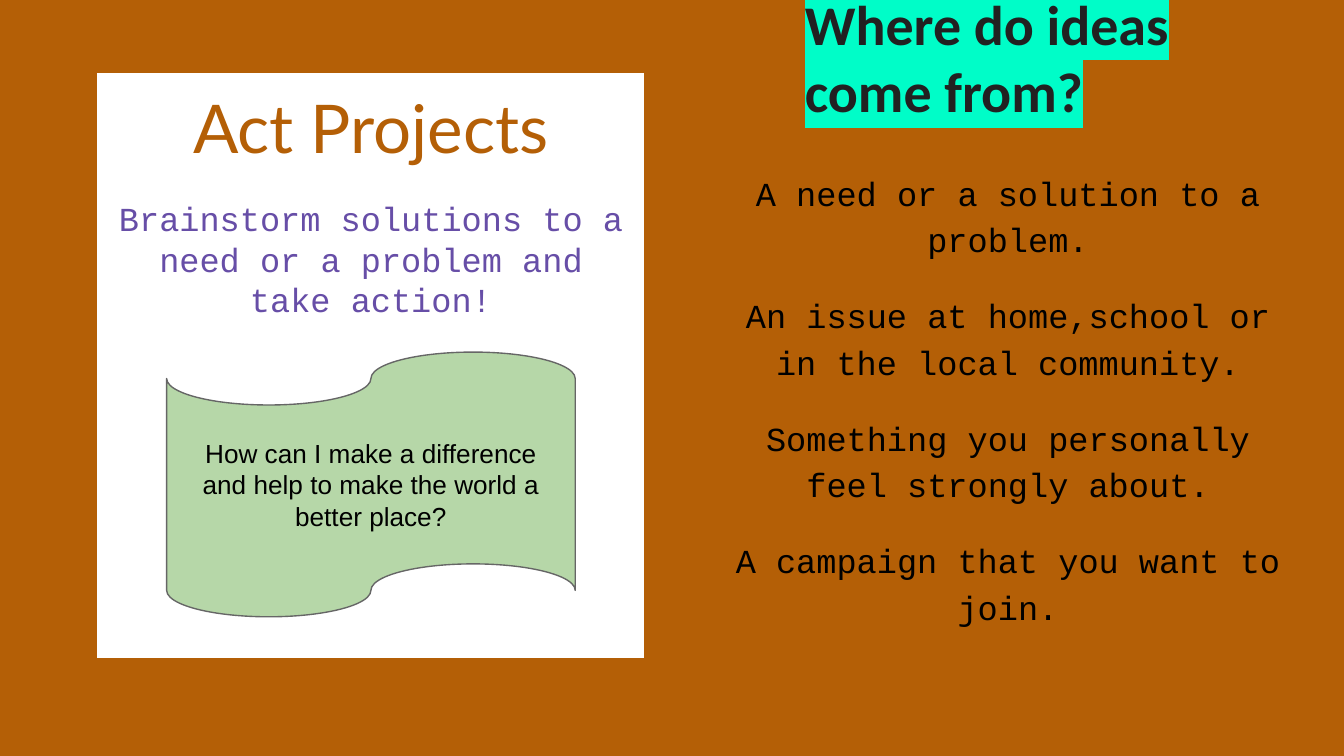
from lxml import etree
from pptx import Presentation
from pptx.dml.color import RGBColor
from pptx.enum.shapes import MSO_SHAPE
from pptx.enum.text import MSO_ANCHOR, PP_ALIGN
from pptx.oxml.ns import qn
from pptx.util import Inches, Pt

RECTANGLE = MSO_SHAPE.RECTANGLE
PUNCHED_TAPE = MSO_SHAPE.FLOWCHART_PUNCHED_TAPE
TOP, MIDDLE, BOTTOM = MSO_ANCHOR.TOP, MSO_ANCHOR.MIDDLE, MSO_ANCHOR.BOTTOM
LEFT, CENTER = PP_ALIGN.LEFT, PP_ALIGN.CENTER

BROWN = "B45F06"
BLACK = "000000"
IDEAS = [
    "A need or a solution to a problem.",
    "An issue at home,school or in the local community.",
    "Something you personally feel strongly about.",
    "A campaign that you want to join.",
]


def color(value):
    return RGBColor.from_string(value)


def apply_format(target, values):
    for name, value in values.items():
        setattr(target, name, value)


def prepare_frame(shape, anchor):
    frame = shape.text_frame
    margins = {f"margin_{side}": Inches(0.1) for side in ("left", "right", "top", "bottom")}
    apply_format(frame, {"word_wrap": True, "vertical_anchor": anchor, **margins})
    return frame


def write_paragraph(paragraph, text, font, size, font_color, bold=False, **paragraph_format):
    apply_format(paragraph, {"alignment": CENTER, **paragraph_format})
    run = paragraph.add_run()
    run.text = text
    apply_format(run.font, {"name": font, "size": Pt(size), "bold": bold})
    run.font.color.rgb = color(font_color)
    return run


def highlight(run, value):
    properties = run.font._element
    mark = etree.Element(qn("a:highlight"))
    etree.SubElement(mark, qn("a:srgbClr"), val=value)
    properties.find(qn("a:solidFill")).addnext(mark)


def add_panel(slide, kind, box, fill, line):
    shape = slide.shapes.add_shape(kind, *map(Inches, box))
    shape.shadow.inherit = False
    shape.fill.solid()
    shape.fill.fore_color.rgb = color(fill)
    shape.line.color.rgb = color(line)
    shape.line.width = Pt(0.75)
    return shape


def add_ideas(slide, left, top, width, height):
    title = slide.shapes.add_textbox(
        Inches(left + 0.54), Inches(top), Inches(3.5), Inches(0.83))
    frame = prepare_frame(title, BOTTOM)
    run = write_paragraph(frame.paragraphs[0], "Where do ideas come from?",
                          "Calibri", 30, "212121", bold=True, alignment=LEFT)
    highlight(run, "00FDC8")

    body = slide.shapes.add_textbox(
        Inches(left), Inches(top + 0.95), Inches(width), Inches(height - 0.95))
    frame = prepare_frame(body, TOP)
    for index, idea in enumerate(IDEAS):
        paragraph = frame.add_paragraph() if index else frame.paragraphs[0]
        write_paragraph(paragraph, idea, "Courier New", 18, BLACK,
                        line_spacing=1.15, space_before=Pt(16 if index else 0))


def add_project_card(slide, left, top, width, height):
    card = add_panel(slide, RECTANGLE, (left, top, width, height), "FFFFFF", BROWN)
    frame = prepare_frame(card, TOP)
    write_paragraph(frame.paragraphs[0], "Act Projects", "Lato", 36, BROWN)
    write_paragraph(frame.add_paragraph(),
                    "Brainstorm solutions to a need or a problem and take action!",
                    "Courier New", 18, "674EA7", space_before=Pt(17))

    tape_box = (left + 0.52, top + 2.08, width - 1.04, 1.97)
    tape = add_panel(slide, PUNCHED_TAPE, tape_box, "B6D7A8", "666666")
    frame = prepare_frame(tape, MIDDLE)
    write_paragraph(frame.paragraphs[0],
                    "How can I make a difference and help to make the world a better place?",
                    "Arial", 14, BLACK)


def main():
    presentation = Presentation()
    presentation.slide_width = Inches(10)
    presentation.slide_height = Inches(10) * 9 // 16
    slide = presentation.slides.add_slide(presentation.slide_layouts[6])
    slide.background.fill.solid()
    slide.background.fill.fore_color.rgb = color(BROWN)
    add_ideas(slide, 5.35, 0.19, 4.3, 4.87)
    add_project_card(slide, 0.72, 0.54, 4.08, 4.36)
    presentation.save("out.pptx")


if __name__ == "__main__":
    main()
